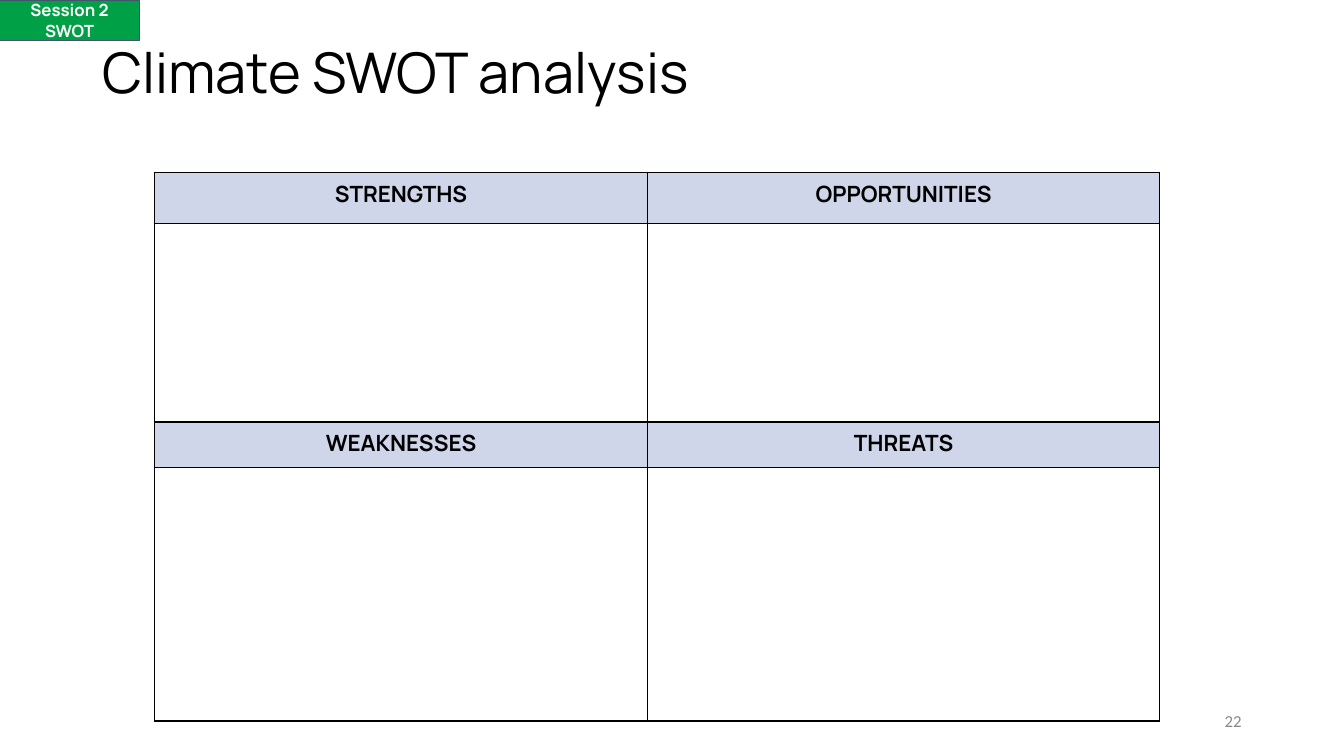
import pptx
import pptx.util
import pptx.dml.color
import pptx.enum.shapes
import pptx.enum.text
import pptx.oxml
import pptx.oxml.ns

Pt = pptx.util.Pt
RGBColor = pptx.dml.color.RGBColor
ALIGN = pptx.enum.text.PP_ALIGN
ANCHOR = pptx.enum.text.MSO_ANCHOR

BLACK = RGBColor(0x00, 0x00, 0x00)
WHITE = RGBColor(0xFF, 0xFF, 0xFF)
GREEN = RGBColor(0x00, 0xA0, 0x47)
SLATE = RGBColor(0x44, 0x54, 0x6A)
LAVENDER = RGBColor(0xCF, 0xD6, 0xEA)
GREY = RGBColor(0x88, 0x88, 0x88)


def write_lines(frame, lines, align, color, **font_format):
    frame.word_wrap = True
    frame.text = "\n".join(lines)
    for paragraph in frame.paragraphs:
        paragraph.alignment = align
        paragraph.font.color.rgb = color
        for key, value in font_format.items():
            setattr(paragraph.font, key, value)


def add_borders(cell):
    properties = cell._tc.get_or_add_tcPr()
    for side in ("lnL", "lnR", "lnT", "lnB"):
        properties.append(pptx.oxml.parse_xml(
            f'<a:{side} {pptx.oxml.ns.nsdecls("a")} w="{Pt(1)}"><a:solidFill>'
            f'<a:srgbClr val="{BLACK}"/></a:solidFill></a:{side}>'))


deck = pptx.Presentation()
deck.slide_width, deck.slide_height = Pt(960), Pt(540)
slide = deck.slides.add_slide(deck.slide_layouts[6])

# Title
title = slide.shapes.add_textbox(Pt(66), Pt(29), Pt(828), Pt(104))
write_lines(title.text_frame, ["Climate SWOT analysis"], ALIGN.LEFT, BLACK,
            name="Manrope", size=Pt(40))
title.text_frame.paragraphs[0].line_spacing = 0.9

# SWOT table: heading rows alternate with empty rows to fill in
headings = {0: ("STRENGTHS", "OPPORTUNITIES"), 2: ("WEAKNESSES", "THREATS")}
column_widths = (352, 366)
row_heights = (36.5, 142, 32.5, 181)
swot = slide.shapes.add_table(4, 2, Pt(110.5), Pt(123), Pt(sum(column_widths)),
                              Pt(sum(row_heights))).table
swot.first_row = swot.horz_banding = False
for column, width in zip(swot.columns, column_widths):
    column.width = Pt(width)
for row_index, height in enumerate(row_heights):
    swot.rows[row_index].height = Pt(height)
    for column_index, cell in enumerate(swot.rows[row_index].cells):
        add_borders(cell)
        cell.margin_top = cell.margin_bottom = Pt(4.3)
        if row_index in headings:
            cell.fill.solid()
            cell.fill.fore_color.rgb = LAVENDER
            write_lines(cell.text_frame, [headings[row_index][column_index]],
                        ALIGN.CENTER, BLACK, name="Manrope", size=Pt(16), bold=True)
        else:
            cell.fill.background()

# Page number
page_number = slide.shapes.add_textbox(Pt(678), Pt(500.5), Pt(216), Pt(28.75))
page_number.text_frame.vertical_anchor = ANCHOR.MIDDLE
write_lines(page_number.text_frame, ["22"], ALIGN.RIGHT, GREY,
            name="Calibri", size=Pt(12))

# Session tag
session_tag = slide.shapes.add_shape(pptx.enum.shapes.MSO_SHAPE.RECTANGLE,
                                     0, 0, Pt(99.5), Pt(29))
session_tag.shadow.inherit = False
session_tag.fill.solid()
session_tag.fill.fore_color.rgb = GREEN
session_tag.line.color.rgb = SLATE
session_tag.line.width = Pt(0.75)
tag_format = {"margin_left": Pt(7.2), "margin_right": Pt(7.2), "margin_top": Pt(7.2),
              "margin_bottom": Pt(7.2), "vertical_anchor": ANCHOR.MIDDLE}
for key, value in tag_format.items():
    setattr(session_tag.text_frame, key, value)
write_lines(session_tag.text_frame, ["Session 2", "SWOT"], ALIGN.CENTER, WHITE,
            name="Manrope", size=Pt(12), bold=True)

deck.save("out.pptx")
